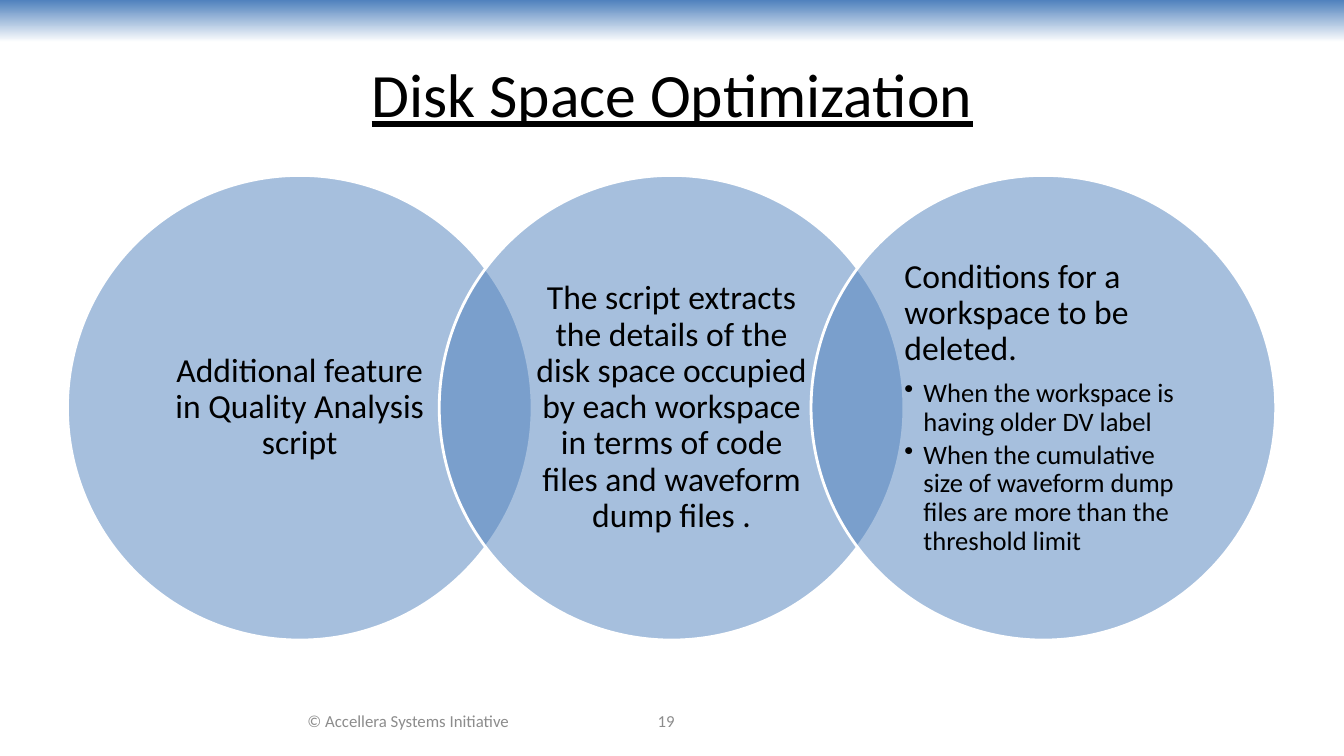
from dataclasses import dataclass

from lxml import etree
from pptx import Presentation
from pptx import util as u
from pptx.dml.color import RGBColor
from pptx.enum import shapes, text
from pptx.oxml.ns import qn

Cm, Pt = u.Cm, u.Pt


@dataclass(frozen=True)
class Theme:
    font: str = "Calibri"
    blue: RGBColor = RGBColor(0x4F, 0x81, 0xBD)
    white: RGBColor = RGBColor(0xFF, 0xFF, 0xFF)
    black: RGBColor = RGBColor(0, 0, 0)
    grey: RGBColor = RGBColor(0x8C, 0x8C, 0x8C)
    title: int = 44
    head: int = 24
    item: int = 19
    foot: int = 12


THEME = Theme()
WIDTH, HEIGHT = 33.87, 19.05
LEFT, TOP, SIZE, STEP = 1.7, 4.42, 11.71, 9.37
CENTER, START = text.PP_ALIGN.CENTER, text.PP_ALIGN.LEFT

RINGS = [
    ("Additional feature in Quality Analysis script", CENTER, []),
    ("The script extracts the details of the disk space occupied by each "
     "workspace in terms of code files and waveform dump files .", CENTER, []),
    ("Conditions for a workspace to be deleted.", START, [
        "When the workspace is having older DV label",
        "When the cumulative size of waveform dump files are more than the "
        "threshold limit",
    ]),
]


def style(para, size, color, align):
    para.alignment = align
    para.font.name = THEME.font
    para.font.size = Pt(size)
    para.font.color.rgb = color


def add_band(slide):
    """Add the strip along the top edge that fades to white."""
    band = slide.shapes.add_shape(
        shapes.MSO_SHAPE.RECTANGLE, 0, 0, Cm(WIDTH), Cm(1.07))
    band.shadow.inherit = False
    band.line.fill.background()
    band.fill.gradient()
    band.fill.gradient_angle = 270
    for stop, color in zip(band.fill.gradient_stops, (THEME.blue, THEME.white)):
        stop.color.rgb = color


def set_title(slide, words):
    title = slide.shapes.title
    title.left, title.top = Cm(LEFT), Cm(0.76)
    title.width, title.height = Cm(30.48), Cm(3.18)
    frame = title.text_frame
    frame.text = words
    frame.vertical_anchor = text.MSO_ANCHOR.MIDDLE
    para = frame.paragraphs[0]
    style(para, THEME.title, THEME.black, CENTER)
    para.font.underline = True


def add_bullet(para):
    props = para._p.get_or_add_pPr()
    indent = Cm(0.48)
    props.set("marL", str(indent))
    props.set("indent", str(-indent))
    etree.SubElement(props, qn("a:buChar"), char="•")


def add_ring(slide, left, head, align, items):
    """Add one see-through circle with its heading and bullets."""
    ring = slide.shapes.add_shape(
        shapes.MSO_SHAPE.OVAL, Cm(left), Cm(TOP), Cm(SIZE), Cm(SIZE))
    ring.shadow.inherit = False
    ring.fill.solid()
    ring.fill.fore_color.rgb = THEME.blue
    color = ring._element.spPr.find(qn("a:solidFill")).find(qn("a:srgbClr"))
    etree.SubElement(color, qn("a:alpha"), val="50000")
    ring.line.color.rgb = THEME.white
    ring.line.width = Pt(2)

    frame = ring.text_frame
    frame.word_wrap = True
    frame.vertical_anchor = text.MSO_ANCHOR.MIDDLE
    frame.margin_left = frame.margin_right = Cm(0.64)
    frame.margin_top = frame.margin_bottom = Cm(0.08)
    para = frame.paragraphs[0]
    para.text = head
    para.line_spacing = 0.9
    para.space_after = Pt(8.4)
    style(para, THEME.head, THEME.black, align)
    for item in items:
        para = frame.add_paragraph()
        para.text = item
        para.line_spacing = 0.9
        para.space_after = Pt(2.85)
        add_bullet(para)
        style(para, THEME.item, THEME.black, align)


def add_foot(slide, left, width, words):
    box = slide.shapes.add_textbox(Cm(left), Cm(17.65), Cm(width), Cm(1.02))
    frame = box.text_frame
    frame.word_wrap = True
    frame.vertical_anchor = text.MSO_ANCHOR.MIDDLE
    frame.text = words
    style(frame.paragraphs[0], THEME.foot, THEME.grey, CENTER)


def main():
    deck = Presentation()
    deck.slide_width, deck.slide_height = Cm(WIDTH), Cm(HEIGHT)
    slide = deck.slides.add_slide(deck.slide_layouts.get_by_name("Title Only"))
    add_band(slide)
    set_title(slide, "Disk Space Optimization")
    for i, (head, align, items) in enumerate(RINGS):
        add_ring(slide, LEFT + i * STEP, head, align, items)
    add_foot(slide, 6.2, 8.18, "© Accellera Systems Initiative")
    add_foot(slide, 13.54, 6.5, "19")
    deck.save("out.pptx")


if __name__ == "__main__":
    main()
